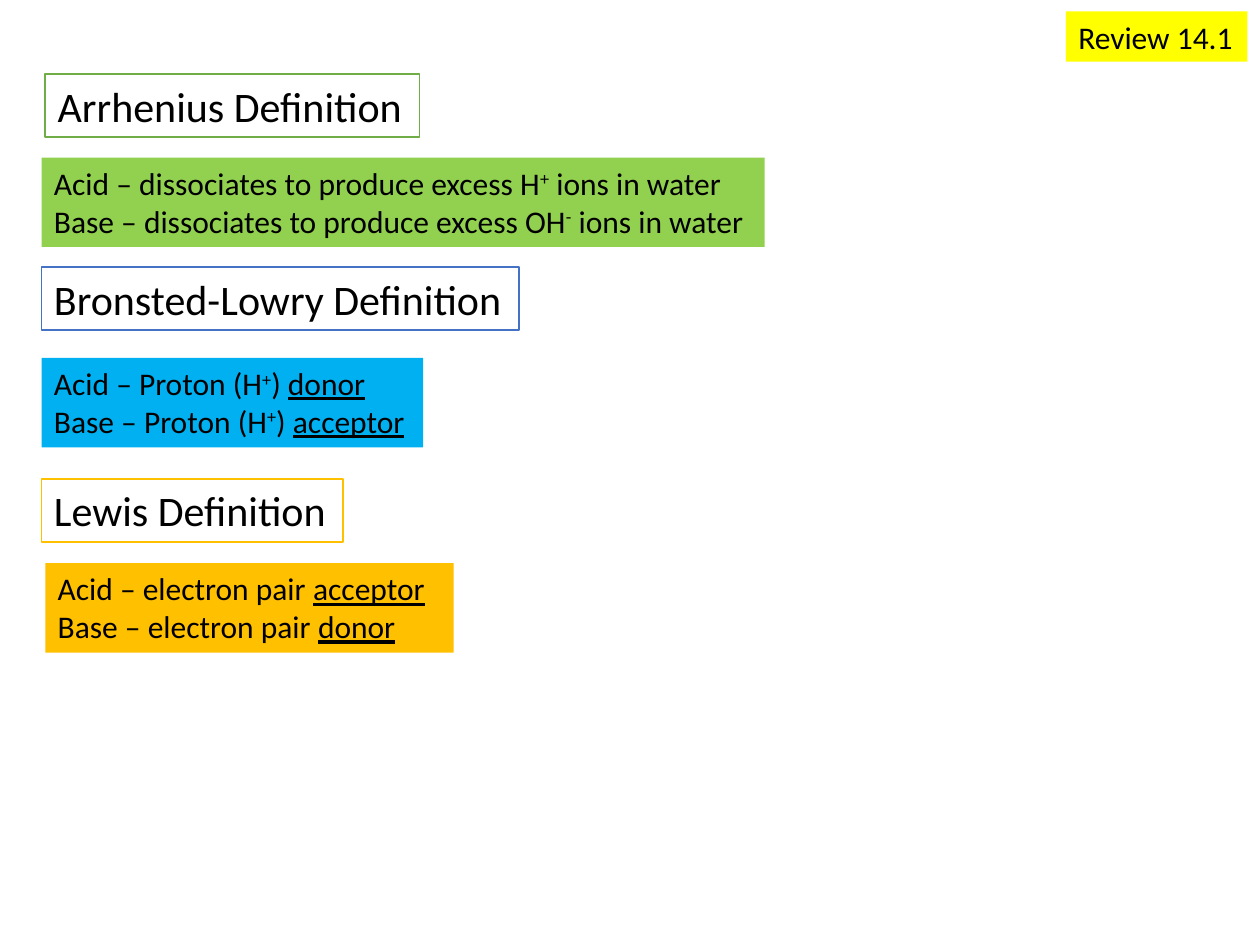
from dataclasses import dataclass

from pptx import Presentation
from pptx.dml.color import RGBColor
from pptx.enum.text import MSO_AUTO_SIZE
from pptx.util import Inches, Pt

FIT_SHAPE = MSO_AUTO_SIZE.SHAPE_TO_FIT_TEXT
FONT = "Calibri"
BLACK, WHITE = "000000", "FFFFFF"
SUPERSCRIPT, UNDERLINE = "^", "_"  # each mark opens and closes a styled piece

# The slide is a grid of 100 columns by 75 rows of square cells
COLUMNS, ROWS = 100, 75
SLIDE_WIDTH, SLIDE_HEIGHT = Inches(10), Inches(7.5)
TITLE_ROWS, DETAIL_ROWS, TAG_ROWS = 5, 7.1, 4
TITLE_SIZE, BODY_SIZE = 24, 18


@dataclass(frozen=True)
class Place:
    column: float
    row: float
    columns: float


@dataclass(frozen=True)
class Definition:
    title: str
    title_place: Place
    outline: str
    acid: str
    base: str
    detail_place: Place
    fill: str


DEFINITIONS = [
    Definition("Arrhenius Definition", Place(3.6, 5.9, 29.7), "70AD47",
               "Acid – dissociates to produce excess H^+^ ions in water",
               "Base – dissociates to produce excess OH^-^ ions in water",
               Place(3.3, 12.5, 57.4), "92D050"),
    Definition("Bronsted-Lowry Definition", Place(3.3, 21.2, 37.9), "4472C4",
               "Acid – Proton (H^+^) _donor_",
               "Base – Proton (H^+^) _acceptor_",
               Place(3.3, 28.4, 30.3), "00B0F0"),
    Definition("Lewis Definition", Place(3.3, 38, 23.9), "FFC000",
               "Acid – electron pair _acceptor_",
               "Base – electron pair _donor_",
               Place(3.6, 44.7, 32.4), "FFC000"),
]


def color(value: str) -> RGBColor:
    return RGBColor.from_string(value)


def split_marks(line: str) -> list[tuple[str, str]]:
    """Split a line into (text, mark) pieces; plain pieces have no mark."""
    pieces, text, mark = [], "", ""
    for letter in line:
        if letter in (SUPERSCRIPT, UNDERLINE):
            pieces.append((text, mark))
            text, mark = "", "" if mark else letter
        else:
            text += letter
    pieces.append((text, mark))
    return [piece for piece in pieces if piece[0]]


def write_line(paragraph, line: str, size: int) -> None:
    for text, mark in split_marks(line):
        run = paragraph.add_run()
        run.text = text
        run.font.name = FONT
        run.font.size = Pt(size)
        run.font.color.rgb = color(BLACK)
        if mark == UNDERLINE:
            run.font.underline = True
        elif mark == SUPERSCRIPT:
            run._r.get_or_add_rPr().set("baseline", "30000")


def draw_box(slide, place: Place, rows: float, lines: list[str], size: int,
             fill: str, outline: str = "") -> None:
    cell_width, cell_height = SLIDE_WIDTH / COLUMNS, SLIDE_HEIGHT / ROWS
    box = slide.shapes.add_textbox(
        round(place.column * cell_width), round(place.row * cell_height),
        round(place.columns * cell_width), round(rows * cell_height))
    box.fill.solid()
    box.fill.fore_color.rgb = color(fill)
    if outline:
        box.line.color.rgb = color(outline)
        box.line.width = Pt(1)
    frame = box.text_frame
    frame.word_wrap = False
    frame.auto_size = FIT_SHAPE
    for index, line in enumerate(lines):
        paragraph = frame.add_paragraph() if index else frame.paragraphs[0]
        write_line(paragraph, line, size)


def main() -> None:
    deck = Presentation()
    deck.slide_width, deck.slide_height = SLIDE_WIDTH, SLIDE_HEIGHT
    slide = deck.slides.add_slide(deck.slide_layouts[6])

    # Outlined title over a filled pair of acid and base statements
    for item in DEFINITIONS:
        draw_box(slide, item.title_place, TITLE_ROWS, [item.title],
                 TITLE_SIZE, WHITE, item.outline)
        draw_box(slide, item.detail_place, DETAIL_ROWS,
                 [item.acid, item.base], BODY_SIZE, item.fill)

    # Section tag in the top right corner
    draw_box(slide, Place(84.6, 0.9, 14.4), TAG_ROWS, ["Review 14.1"],
             BODY_SIZE, "FFFF00")

    deck.save("out.pptx")


if __name__ == "__main__":
    main()
